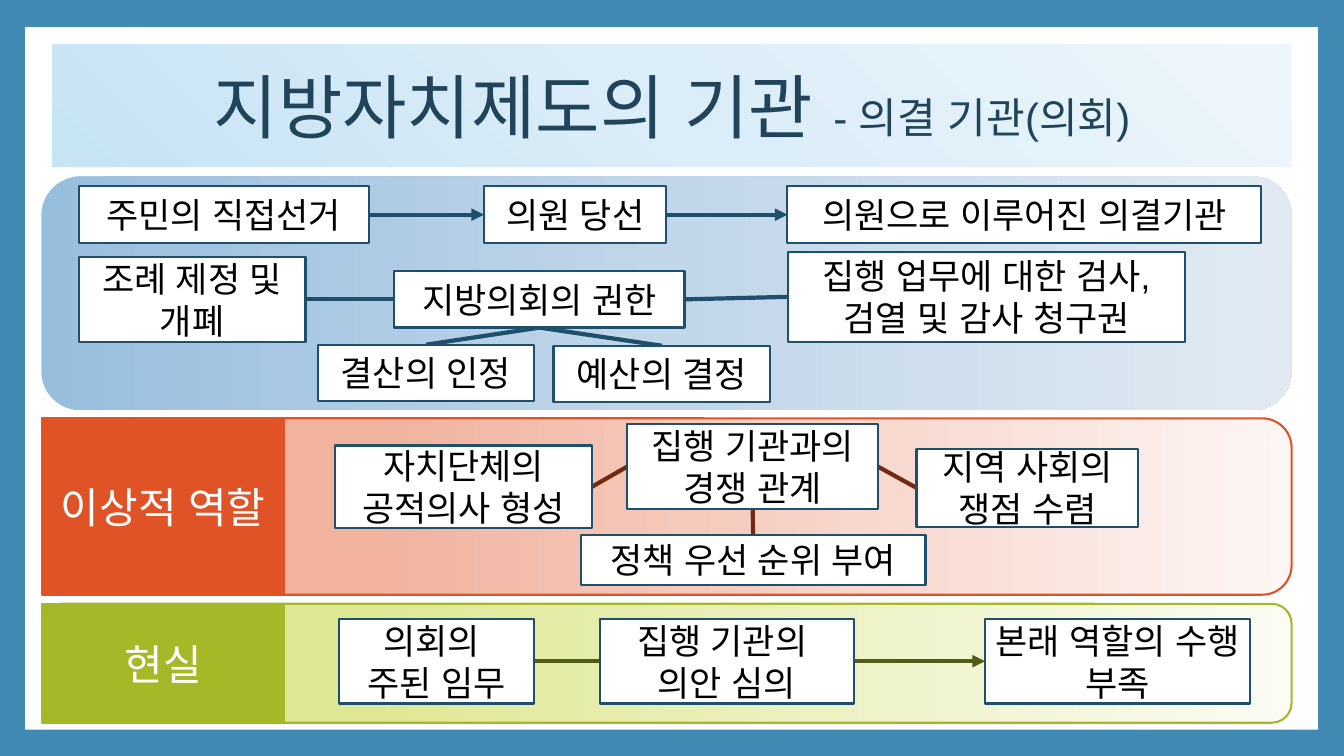
from lxml.etree import SubElement
from pptx import Presentation
from pptx.dml.color import RGBColor
from pptx.enum.shapes import MSO_CONNECTOR, MSO_SHAPE
from pptx.enum.text import MSO_ANCHOR, PP_ALIGN
from pptx.oxml.ns import qn
from pptx.util import Inches, Pt

FONT = "Arial"
COLORS = {
    "frame": "418AB3", "white": "FFFFFF", "black": "000000", "title": "20455A",
    "navy": "1E506E", "brown": "722811", "olive": "535C14",
    "orange": "DF5327", "green": "A6B727",
}
TITLE = [("지방자치제도의 기관 ", 50), ("- 의결 기관(의회)", 30)]
TITLE_STOPS = [(0, "C7E4F5"), (50, "DBEDF8"), (100, "EDF6FB")]
COUNCIL_STOPS = [(0, "98BEDE"), (50, "C1D6E9"), (100, "E1EAF3")]

# label, color, top, height, gradient stops
BANDS = [
    ("현실", "green", 5.99, 1.18,
     [(0, "FBFCF3"), (74, "DEE894"), (83, "DEE894"), (100, "E9F0B8")]),
    ("이상적 역할", "orange", 4.15, 1.75,
     [(0, "FDF6F4"), (74, "F1B29E"), (83, "F1B29E"), (100, "F5CBBE")]),
]

# name: (paragraphs, left, top, width, height)
BOXES = {
    "election": (["주민의 직접선거"], 0.78, 1.85, 2.88, 0.56),
    "elected": (["의원 당선"], 4.8, 1.85, 1.81, 0.56),
    "assembly": (["의원으로 이루어진 의결기관"], 7.81, 1.85, 4.7, 0.56),
    "ordinance": (["조례 제정 및 개폐"], 0.78, 2.55, 2.25, 0.84),
    "powers": (["지방의회의 권한"], 3.91, 2.69, 2.88, 0.56),
    "audit": (["집행 업무에 대한 검사, 검열 및 감사 청구권"], 7.82, 2.5, 3.93, 0.89),
    "settlement": (["결산의 인정"], 3.15, 3.42, 2.15, 0.56),
    "budget": (["예산의 결정"], 5.49, 3.43, 2.15, 0.56),
    "public will": (["자치단체의 공적의사 형성"], 3.32, 4.42, 2.55, 0.82),
    "rivalry": (["집행 기관과의 경쟁 관계"], 6.22, 4.21, 2.49, 0.84),
    "local issues": (["지역 사회의 쟁점 수렴"], 9.09, 4.45, 2.2, 0.78),
    "priorities": (["정책 우선 순위 부여"], 5.76, 5.31, 3.42, 0.49),
    "main duty": (["의회의 ", "주된 임무"], 3.36, 6.14, 1.94, 0.84),
    "bill review": (["집행 기관의 ", "의안 심의"], 5.95, 6.14, 2.52, 0.84),
    "shortfall": (["본래 역할의 수행 부족"], 9.77, 6.14, 2.63, 0.84),
}

TOP, LEFT, BOTTOM, RIGHT = range(4)
# from, side, to, side, color, arrowhead
LINKS = [
    ("powers", BOTTOM, "settlement", TOP, "navy", False),
    ("budget", TOP, "powers", BOTTOM, "navy", False),
    ("ordinance", RIGHT, "powers", LEFT, "navy", False),
    ("audit", LEFT, "powers", RIGHT, "navy", False),
    ("election", RIGHT, "elected", LEFT, "navy", True),
    ("elected", RIGHT, "assembly", LEFT, "navy", True),
    ("rivalry", LEFT, "public will", RIGHT, "brown", False),
    ("rivalry", BOTTOM, "priorities", TOP, "brown", False),
    ("rivalry", RIGHT, "local issues", LEFT, "brown", False),
    ("bill review", RIGHT, "shortfall", LEFT, "olive", True),
    ("main duty", RIGHT, "bill review", LEFT, "olive", False),
]


def rgb(name):
    return RGBColor.from_string(COLORS[name])


def add_block(kind, left, top, width, height, fill=None, line=None):
    block = page.shapes.add_shape(
        kind, Inches(left), Inches(top), Inches(width), Inches(height))
    block.shadow.inherit = False
    if fill:
        block.fill.solid()
        block.fill.fore_color.rgb = rgb(fill)
    if line:
        block.line.color.rgb = rgb(line)
        block.line.width = Pt(1.5)
    else:
        block.line.fill.background()
    return block


def set_gradient(shape, stops, angle=None):
    """Linear at the given angle, or radial from the bottom left corner."""
    shape.fill.gradient()
    grad = shape.element.spPr.find(qn("a:gradFill"))
    for child in list(grad):
        grad.remove(child)
    stop_list = SubElement(grad, qn("a:gsLst"))
    for position, color in stops:
        stop = SubElement(stop_list, qn("a:gs"), pos=str(position * 1000))
        SubElement(stop, qn("a:srgbClr"), val=color)
    if angle is None:
        radial = SubElement(grad, qn("a:path"), path="circle")
        SubElement(radial, qn("a:fillToRect"), t="100000", r="100000")
    else:
        SubElement(grad, qn("a:lin"), ang=str(angle * 60000), scaled="0")


def add_span(para, text, size, color):
    para.alignment = PP_ALIGN.CENTER
    span = para.add_run()
    span.text = text
    span.font.size = Pt(size)
    span.font.name = FONT
    span.font.color.rgb = rgb(color)
    SubElement(span.font._element, qn("a:ea"), typeface=FONT)


def write(box, lines, size, color):
    frame = box.text_frame
    frame.word_wrap = True
    frame.vertical_anchor = MSO_ANCHOR.MIDDLE
    for index, line in enumerate(lines):
        para = frame.add_paragraph() if index else frame.paragraphs[0]
        add_span(para, line, size, color)


deck = Presentation()
deck.slide_width, deck.slide_height = Inches(13.33), Inches(7.5)
page = deck.slides.add_slide(deck.slide_layouts[5])
page.background.fill.solid()
page.background.fill.fore_color.rgb = rgb("frame")

# White panel behind the title
panel = add_block(MSO_SHAPE.RECTANGLE, 0.25, 0.27, 12.82, 6.97, "white")
title = page.shapes.title
title.element.addprevious(panel.element)

# Title
title.left, title.top = Inches(0.52), Inches(0.44)
title.width, title.height = Inches(12.29), Inches(1.21)
set_gradient(title, TITLE_STOPS)
title.text_frame.word_wrap = True
title.text_frame.vertical_anchor = MSO_ANCHOR.MIDDLE
for text, size in TITLE:
    add_span(title.text_frame.paragraphs[0], text, size, "title")

# Labelled bands and the council panel
for label, color, top, height, stops in BANDS:
    band = add_block(MSO_SHAPE.ROUNDED_RECTANGLE, 0.42, top, 12.39, height, line=color)
    set_gradient(band, stops, 180)
    tag = add_block(MSO_SHAPE.RECTANGLE, 0.42, top, 2.4, height, color, color)
    write(tag, [label], 30, "white")
council = add_block(MSO_SHAPE.ROUNDED_RECTANGLE, 0.41, 1.75, 12.4, 2.32)
set_gradient(council, COUNCIL_STOPS, 0)

# Boxes
boxes = {}
for name, (lines, *place) in BOXES.items():
    boxes[name] = add_block(MSO_SHAPE.RECTANGLE, *place, "white", "navy")
    write(boxes[name], lines, 25, "black")

# Connectors, placed behind the boxes
for start, start_side, end, end_side, color, arrow in LINKS:
    link = page.shapes.add_connector(MSO_CONNECTOR.STRAIGHT, 0, 0, 0, 0)
    link.begin_connect(boxes[start], start_side)
    link.end_connect(boxes[end], end_side)
    link.line.color.rgb = rgb(color)
    link.line.width = Pt(3)
    if arrow:
        SubElement(link.line._get_or_add_ln(), qn("a:tailEnd"), type="triangle")
    SubElement(link.element.spPr, qn("a:effectLst"))
    boxes["election"].element.addprevious(link.element)

deck.save("out.pptx")
